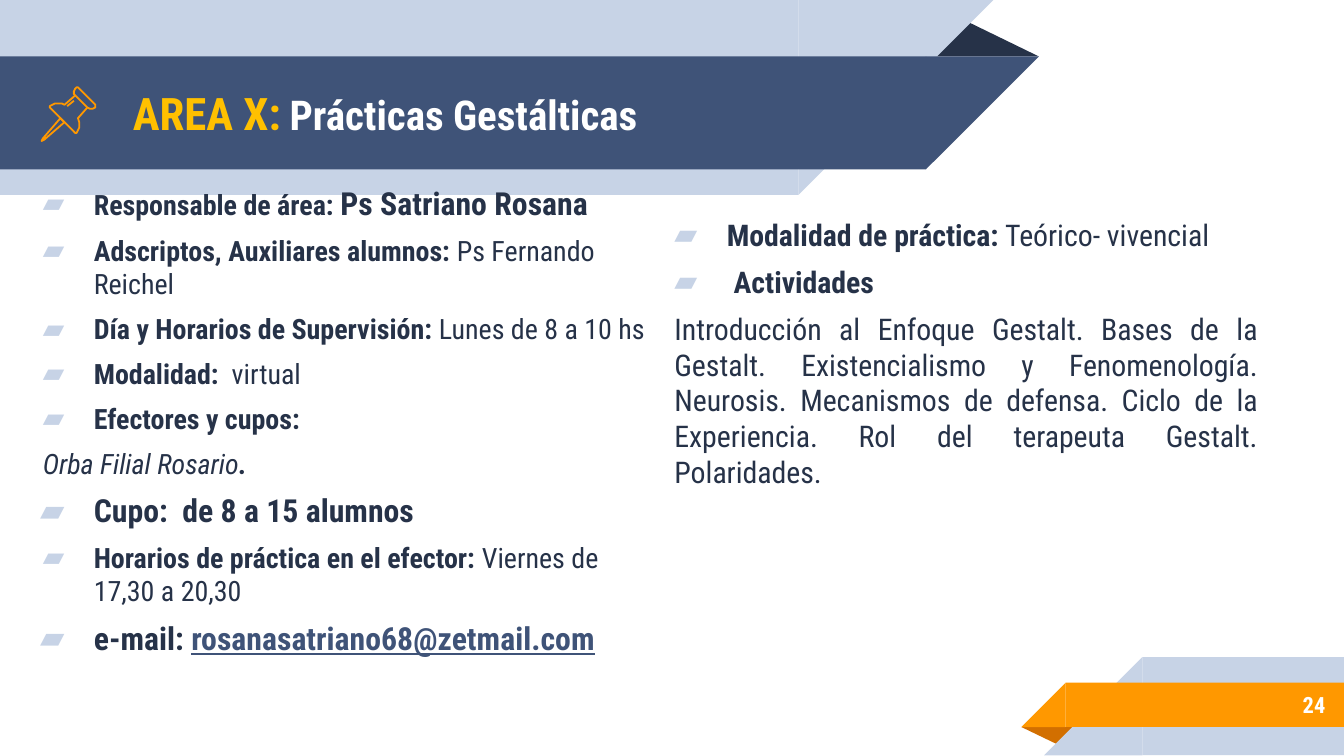
from pptx import Presentation
from pptx.dml.color import RGBColor as RGB
from pptx.enum.shapes import MSO_SHAPE as Kind
from pptx.enum.text import MSO_ANCHOR as Anchor, PP_ALIGN as Align
from pptx.oxml.ns import qn
from pptx.util import Inches, Pt
from lxml.etree import SubElement as Sub

FONT = "Roboto Condensed"
WHITE = RGB(0xFF, 0xFF, 0xFF)
INK = RGB(0x26, 0x32, 0x48)
NAVY = RGB(0x3F, 0x53, 0x78)
PALE = RGB(0xC7, 0xD3, 0xE6)
ORANGE = RGB(0xFF, 0x98, 0x00)
RUST = RGB(0xD2, 0x6F, 0x00)
GOLD = RGB(0xFF, 0xC0, 0x00)

PIN = [
    ([(45, 88), (32, 103), (31, 105), (33, 104), (48, 91)], True),
    ([(56, 71), (65, 80), (67, 81), (69, 81), (71, 80), (71, 78),
      (58, 65), (57, 65), (56, 66), (55, 68), (55, 70)], True),
    ([(56, 71), (48, 78), (46, 77), (44, 77), (41, 77), (39, 78),
      (37, 79), (37, 80), (38, 81), (55, 98), (56, 99), (57, 99),
      (58, 97), (59, 95), (59, 91), (58, 88), (65, 80)], False),
    ([(50, 79), (55, 75)], False),
]

LEFT = [
    (0.38, [("Responsable de área: ", 15, "b"), ("Ps Satriano Rosana", 17, "b")]),
    (0.38, [("Adscriptos, Auxiliares alumnos: ", 15, "b"),
            ("Ps Fernando Reichel", 15, "")]),
    (0.38, [("Día y Horarios de Supervisión: ", 15, "b"),
            ("Lunes de 8 a 10 hs", 15, "")]),
    (0.38, [("Modalidad:  ", 15, "b"), ("virtual", 15, "")]),
    (0.38, [("Efectores y cupos:", 15, "b")]),
    (0, [("Orba Filial Rosario", 15, "i"), (".", 15, "bi")]),
    (0.4, [("Cupo:  de 8 a 15 alumnos", 17, "b")]),
    (0.38, [("Horarios de práctica en el efector: ", 15, "b"),
            ("Viernes de 17,30 a 20,30", 15, "")]),
    (0.4, [("e-mail: ", 17, "b"),
           ("rosanasatriano68@zetmail.com", 17, "bu", NAVY)]),
]

RIGHT = [
    (0.39, [("Modalidad de práctica:", 16, "b"), (" Teórico- vivencial", 16, "")]),
    (0.39, [(" ", 16, ""), ("Actividades", 16, "b")]),
    (0, [("Introducción al Enfoque Gestalt. Bases de la Gestalt. "
          "Existencialismo y Fenomenología. Neurosis. Mecanismos de defensa. "
          "Ciclo de la Experiencia. Rol del terapeuta Gestalt. Polaridades.",
          16, "")]),
]


def add_form(slide, kind, box, color, turn=0, flip=False):
    form = slide.shapes.add_shape(kind, *map(Inches, box))
    form.shadow.inherit = False
    form.fill.solid()
    form.fill.fore_color.rgb = color
    form.line.fill.background()
    form.rotation = turn
    if flip:
        form._element.spPr.find(qn("a:xfrm")).set("flipH", "1")
    if kind == Kind.ISOSCELES_TRIANGLE:
        form.adjustments[0] = 0.324


def add_top(slide, top, wide, high, color):
    add_form(slide, Kind.RECTANGLE, (0, top, wide, high), color, 180, True)
    add_form(slide, Kind.RIGHT_TRIANGLE, (wide, top, high, high), color, 180, True)


def add_foot(slide, left, top, high, color):
    start = left + high
    add_form(slide, Kind.RECTANGLE, (start, top, 10 - start, high), color, flip=True)
    add_form(slide, Kind.RIGHT_TRIANGLE, (left, top, high, high), color, flip=True)


def add_pin(slide):
    for dots, close in PIN:
        pen = slide.shapes.build_freeform(*dots[0], scale=Inches(0.01))
        pen.add_line_segments(dots[1:], close=close)
        part = pen.convert_to_shape()
        part.shadow.inherit = False
        part.fill.background()
        part.line.color.rgb = ORANGE
        part.line.width = Pt(0.96)


def add_box(slide, box, anchor=Anchor.TOP):
    frame = slide.shapes.add_textbox(*map(Inches, box)).text_frame
    frame.word_wrap = True
    frame.vertical_anchor = anchor
    frame.margin_left = frame.margin_right = Inches(0.1)
    frame.margin_top = frame.margin_bottom = Inches(0.1)
    return frame


def add_run(para, text, size, style="", color=INK):
    run = para.add_run()
    run.text = text
    font = run.font
    font.name = FONT
    font.size = Pt(size)
    font.color.rgb = color
    font.bold = "b" in style
    font.italic = "i" in style
    font.underline = "u" in style


def set_mark(para, hang, plain):
    para.space_before = Pt(6)
    props = para._p.get_or_add_pPr()
    props.set("marL", str(Inches(0.5 if hang else plain)))
    props.set("indent", str(-Inches(hang)))
    if hang:
        tint = Sub(props, qn("a:buClr"))
        Sub(tint, qn("a:srgbClr")).set("val", str(PALE))
        Sub(props, qn("a:buFont")).set("typeface", FONT)
        Sub(props, qn("a:buChar")).set("char", "▰")


def add_list(slide, box, items, align, plain):
    frame = add_box(slide, box)
    for i, (hang, runs) in enumerate(items):
        para = frame.add_paragraph() if i else frame.paragraphs[0]
        para.alignment = align
        set_mark(para, hang, plain)
        for run in runs:
            add_run(para, *run)


def add_line(slide, box, runs, align):
    para = add_box(slide, box, Anchor.MIDDLE).paragraphs[0]
    para.alignment = align
    for run in runs:
        add_run(para, *run)


def main():
    deck = Presentation()
    deck.slide_width = Inches(10)
    deck.slide_height = deck.slide_width * 9 // 16
    slide = deck.slides.add_slide(deck.slide_layouts[6])

    add_form(slide, Kind.ISOSCELES_TRIANGLE, (6.88, 0.14, 0.85, 0.28), INK)
    add_top(slide, 0, 5.94, 1.45, PALE)
    add_top(slide, 0.42, 6.89, 0.84, NAVY)
    add_form(slide, Kind.ISOSCELES_TRIANGLE, (7.6, 5.41, 0.43, 0.14), RUST, 180)
    add_foot(slide, 7.77, 4.89, 0.73, PALE)
    add_foot(slide, 7.6, 5.08, 0.33, ORANGE)

    add_list(slide, (0.1, 1.27, 4.9, 4.36), LEFT, Align.LEFT, 0.12)
    add_list(slide, (4.81, 1.51, 4.65, 2.98), RIGHT, Align.JUSTIFY, 0.11)
    add_line(slide, (8.33, 5.07, 1.63, 0.35), [("24", 12, "b", WHITE)], Align.RIGHT)
    title = [("AREA X:", 24, "b", GOLD), (" ", 20, "b", GOLD),
             ("Prácticas Gestálticas", 22, "b", WHITE)]
    add_line(slide, (0.89, 0.42, 6.18, 0.84), title, Align.LEFT)
    add_pin(slide)
    deck.save("out.pptx")


if __name__ == "__main__":
    main()
